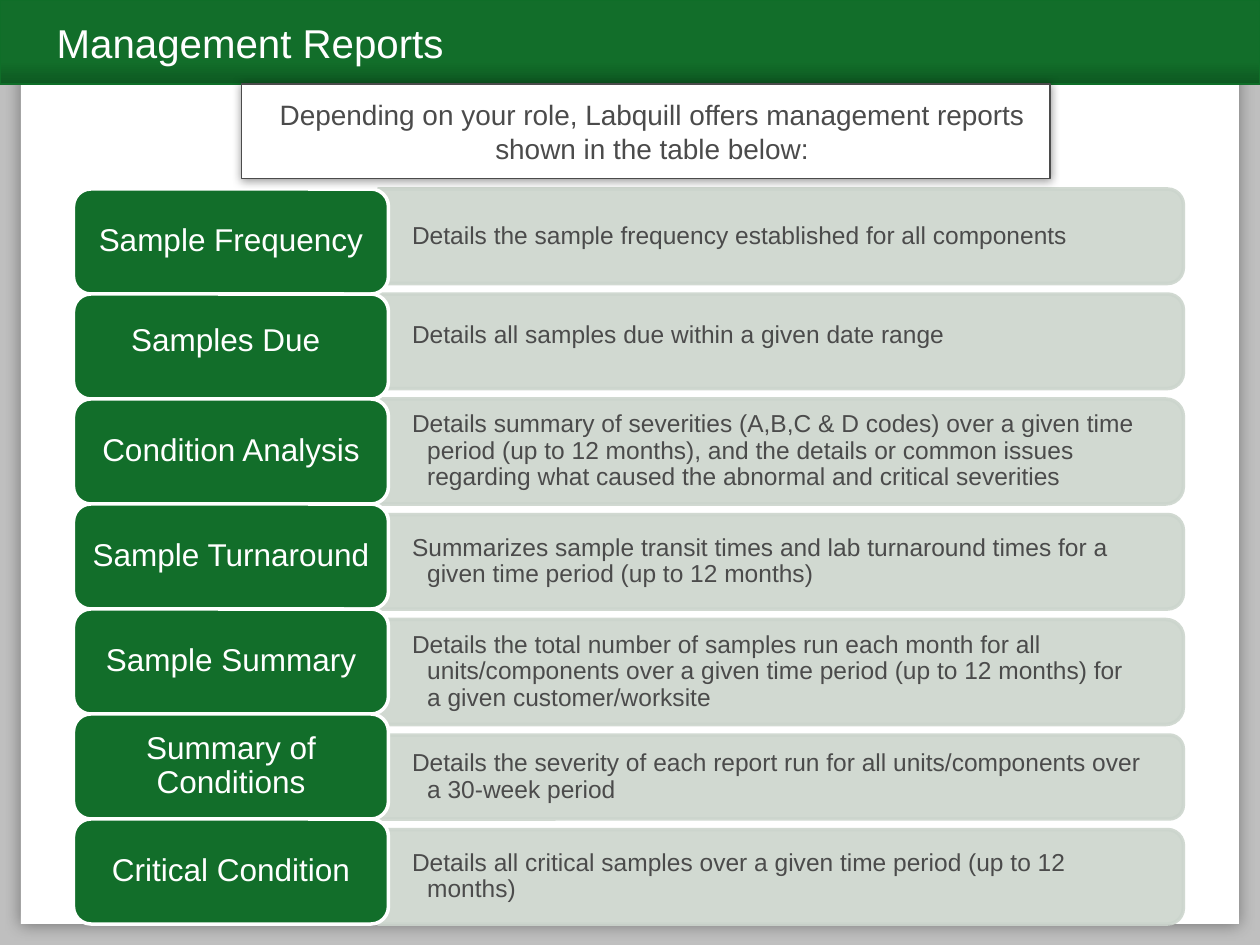
from lxml.etree import SubElement
from pptx import Presentation
from pptx.dml.color import RGBColor
from pptx.enum.shapes import MSO_SHAPE
from pptx.enum.text import MSO_ANCHOR, MSO_AUTO_SIZE, PP_ALIGN
from pptx.oxml.ns import qn
from pptx.util import Inches, Pt

WHITE = RGBColor(0xFF, 0xFF, 0xFF)
BLACK = RGBColor(0, 0, 0)
BACK = RGBColor(0xBF, 0xBF, 0xBF)
GREEN = RGBColor(0x12, 0x6E, 0x2A)
EDGE = RGBColor(0x0F, 0x6E, 0x28)
DARK = RGBColor(0x0D, 0x59, 0x21)
PALE = RGBColor(0xCC, 0xD5, 0xCD)
GREY = RGBColor(0x4B, 0x4B, 0x4B)

deck = Presentation()
deck.slide_width, deck.slide_height = Inches(10), Inches(7.5)
slide = deck.slides.add_slide(deck.slide_layouts[5])
slide.background.fill.solid()
slide.background.fill.fore_color.rgb = BACK
shapes = slide.shapes
CELL = deck.slide_width / 120


def write(shape, text, size, color, align=PP_ALIGN.LEFT, anchor=MSO_ANCHOR.MIDDLE,
          pad=(0.1, 0.05, 0.1, 0.05), space=1.0, hang=0):
    frame = shape.text_frame
    frame.word_wrap, frame.auto_size = True, MSO_AUTO_SIZE.NONE
    frame.vertical_anchor = anchor
    frame.margin_left, frame.margin_top, frame.margin_right, frame.margin_bottom = map(Inches, pad)
    para = frame.paragraphs[0]
    para.alignment, para.line_spacing = align, space
    if hang:
        props = para._p.get_or_add_pPr()
        props.set("marL", str(Inches(hang)))
        props.set("indent", str(-Inches(hang)))
    run = para.add_run()
    run.text = text
    run.font.name, run.font.size, run.font.color.rgb = "Arial", Pt(size), color


def draw(kind, left, top, wide, high, fill, line=None, width=1, turn=0, glow=None):
    shape = shapes.add_shape(kind, *(round(n * CELL) for n in (left, top, wide, high)))
    shape.rotation = turn
    shape.shadow.inherit = False
    shape.fill.solid()
    shape.fill.fore_color.rgb = fill
    if line is None:
        shape.line.fill.background()
    else:
        shape.line.color.rgb, shape.line.width = line, Pt(width)
    if glow:
        alpha, blur, dist, angle = glow
        cast = SubElement(shape.element.spPr.find(qn("a:effectLst")), qn("a:outerShdw"),
                          blurRad=str(Pt(blur)), dist=str(Pt(dist)),
                          dir=str(angle * 60000), algn="ctr", rotWithShape="0")
        tint = SubElement(cast, qn("a:srgbClr"), val=str(BLACK))
        SubElement(tint, qn("a:alpha"), val=str(alpha * 1000))
    return shape


draw(MSO_SHAPE.RECTANGLE, 2, 2, 116, 86, WHITE, glow=(37, 8.8, 1, 90))
band = draw(MSO_SHAPE.RECTANGLE, 0, 0, 120, 8, GREEN, EDGE, 0.75)
band.fill.gradient()
band.fill.gradient_angle = 90
for stop, place, color in zip(band.fill.gradient_stops, (0, 0.28), (DARK, GREEN)):
    stop.position, stop.color.rgb = place, color

title = shapes.title
title.left, title.top, title.width, title.height = map(Inches, (0.35, 0.16, 8.83, 0.42))
write(title, "Management Reports", 23, WHITE, anchor=MSO_ANCHOR.BOTTOM)
band.element.addnext(title.element)

ROWS = [
    ("Sample Frequency", 9, 0, "Details the sample frequency established for all components"),
    ("Samples Due", 9, -0.5, "Details all samples due within a given date range"),
    ("Condition Analysis", 10, 0, "Details summary of severities (A,B,C & D codes) over a given time period (up to 12 months), and the details or common issues regarding what caused the abnormal and critical severities"),
    ("Sample Turnaround", 9, 0, "Summarizes sample transit times and lab turnaround times for a given time period (up to 12 months)"),
    ("Sample Summary", 10, 0, "Details the total number of samples run each month for all units/components over a given time period (up to 12 months) for a given customer/worksite"),
    ("Summary of Conditions", 8, 0, "Details the severity of each report run for all units/components over a 30-week period"),
    ("Critical Condition", 9, 0, "Details all critical samples over a given time period (up to 12 months)"),
]
START, LEFT, WIDE, STEP = 18, 36, 76.7, 10

top = START
for name, high, nudge, note in ROWS:
    panel = draw(MSO_SHAPE.ROUND_2_SAME_RECTANGLE, LEFT + (WIDE - high) / 2,
                 top + (high - WIDE) / 2, high, WIDE, PALE, PALE, 2, turn=90)
    for tint in panel.element.spPr.iter(qn("a:srgbClr")):
        SubElement(tint, qn("a:alpha"), val="90000")
    box = shapes.add_textbox(*(round(n * CELL) for n in (LEFT, top + 0.4 + nudge, 76.2, high - 0.8)))
    write(box, note, 14, GREY, pad=(0.27, 0.14, 0.27, 0.14), space=0.9, hang=0.12)
    top += high + 1

for row, (name, high, nudge, note) in enumerate(ROWS):
    top = START + row * STEP
    draw(MSO_SHAPE.ROUNDED_RECTANGLE, 7, top, 30, STEP, GREEN, WHITE, 2)
    box = shapes.add_textbox(*(round(n * CELL) for n in (7.5 + nudge, top + 0.5 + nudge, 29, 9)))
    write(box, name, 18, WHITE, PP_ALIGN.CENTER, pad=(0.07, 0.04, 0.07, 0.04), space=0.9)

intro = draw(MSO_SHAPE.RECTANGLE, 23, 8, 77, 9, WHITE, GREY, glow=(40, 5, 0, 0))
write(intro, "Depending on your role, Labquill offers management reports shown in the table below:",
      16, GREY, PP_ALIGN.CENTER, pad=(0.2, 0.1, 0.1, 0.1))

deck.save("out.pptx")
